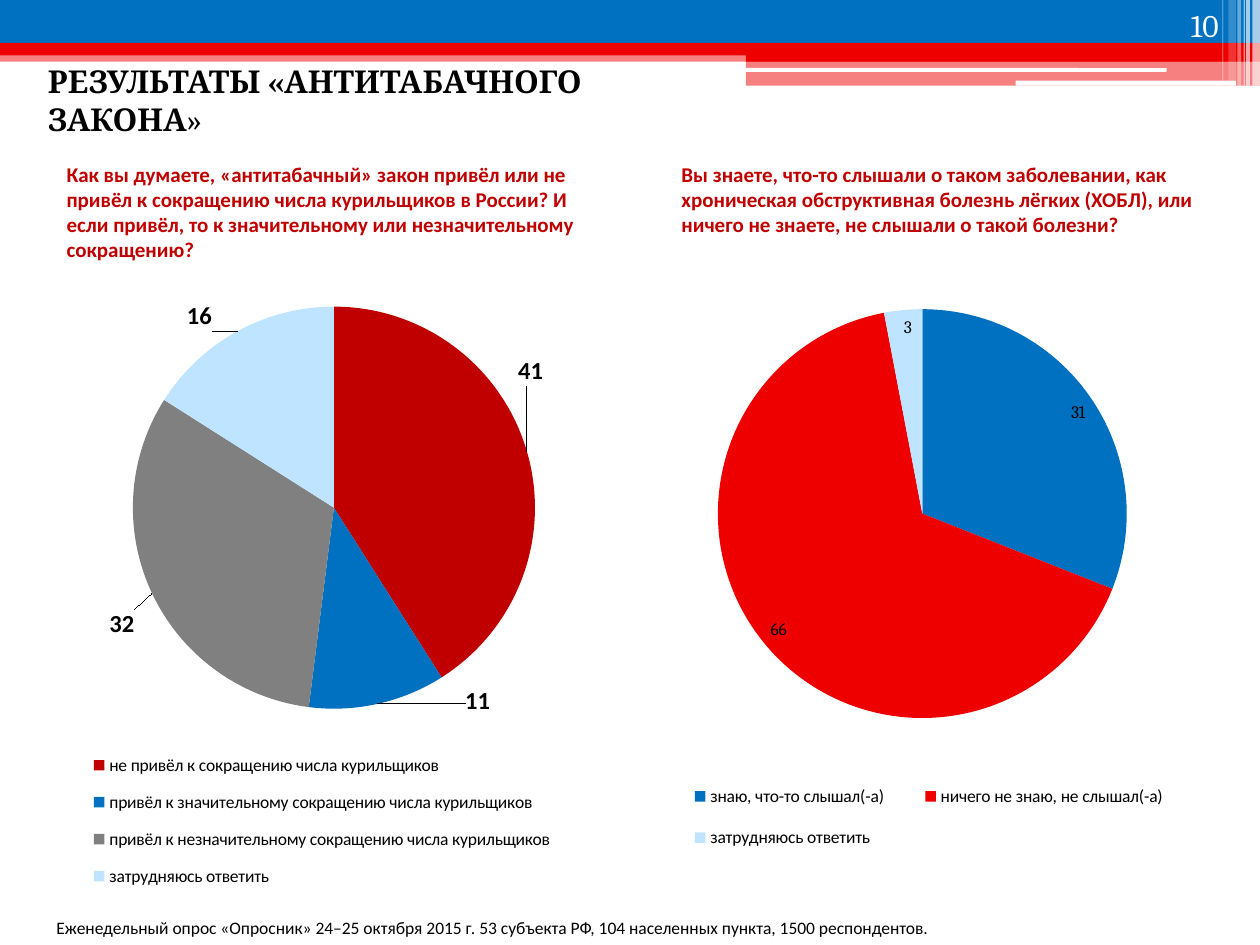
from lxml.etree import SubElement
from pptx import Presentation
from pptx.chart.data import CategoryChartData
from pptx.dml.color import RGBColor
from pptx.enum.chart import XL_CHART_TYPE, XL_LABEL_POSITION, XL_LEGEND_POSITION
from pptx.enum.shapes import MSO_SHAPE
from pptx.enum.text import MSO_ANCHOR, PP_ALIGN
from pptx.oxml import parse_xml
from pptx.oxml.ns import nsdecls, qn
from pptx.util import Inches, Pt

BLACK = RGBColor(0x00, 0x00, 0x00)
WHITE = RGBColor(0xFF, 0xFF, 0xFF)
BLUE = RGBColor(0x00, 0x70, 0xC0)
RED = RGBColor(0xEE, 0x00, 0x00)
DARK_RED = RGBColor(0xC0, 0x00, 0x00)
GRAY = RGBColor(0x80, 0x80, 0x80)
PALE_BLUE = RGBColor(0xBF, 0xE4, 0xFF)

TITLE = {"name": "Cambria", "size": Pt(18), "bold": True}
NUMBER = {"name": "Cambria", "size": Pt(18), "bold": False}
QUESTION = {"name": "Calibri", "size": Pt(12), "bold": True}
NOTE = {"name": "Calibri", "size": Pt(10), "bold": False}
CHART = {"name": "Cambria", "size": Pt(10)}
LABEL = {"name": "Calibri", "size": Pt(14), "bold": True}

LAW = {
    "values": [
        ("не привёл к сокращению числа курильщиков", 41, DARK_RED),
        ("привёл к значительному сокращению числа курильщиков", 11, BLUE),
        ("привёл к незначительному сокращению числа курильщиков", 32, GRAY),
        ("затрудняюсь ответить", 16, PALE_BLUE),
    ],
    "plot": (0.147, 0.05, 0.751, 0.634),
    "legend": (0.03, 0.73, 0.94, 0.26),
    "legend_position": XL_LEGEND_POSITION.BOTTOM,
    "label_position": XL_LABEL_POSITION.OUTSIDE_END,
    "label_font": LABEL,
    "offsets": [(-0.03, -0.1), (0.16, -0.04), (-0.02, 0.02), (-0.04, 0.01)],
}
DISEASE = {
    "values": [
        ("знаю, что-то слышал(-а)", 31, BLUE),
        ("ничего не знаю, не слышал(-а)", 66, RED),
        ("затрудняюсь ответить", 3, PALE_BLUE),
    ],
    "plot": (0.15, 0.089, 0.698, 0.665),
    "legend": (0.05, 0.83, 0.92, 0.18),
    "legend_position": XL_LEGEND_POSITION.RIGHT,
    "label_position": XL_LABEL_POSITION.INSIDE_END,
    "label_font": {},
    "offsets": [],
}


def inches(box):
    """Convert a box to lengths."""
    return [Inches(v) for v in box]


def set_font(font, fmt, color):
    """Apply format values and a colour to a font."""
    for key, value in fmt.items():
        setattr(font, key, value)
    font.color.rgb = color


def add_bar(slide, box, color, alpha=100, shape=MSO_SHAPE.RECTANGLE):
    """Add a borderless bar, with alpha in percent."""
    sp = slide.shapes.add_shape(shape, *inches(box))
    sp.shadow.inherit = False
    sp.fill.solid()
    sp.fill.fore_color.rgb = color
    sp.line.fill.background()
    if alpha < 100:
        clr = sp.fill._xPr.find(".//" + qn("a:srgbClr"))
        SubElement(clr, qn("a:alpha")).set("val", str(alpha * 1000))


def add_header(slide, box):
    """Draw the striped band with its accents and the fading edge."""
    left, top, width, _ = box
    for y, height, color, alpha in [
        (0.4, 0.09, RED, 50), (0, 0.34, BLUE, 100), (0.34, 0.1, RED, 100),
    ]:
        add_bar(slide, (left, top + y, width, height), color, alpha)
    for y, height, alpha in [(0.39, 0.1, 100), (0.48, 0.2, 50)]:
        add_bar(slide, (left + 5.92, top + y, width - 5.92, height), RED, alpha)
    for x, y, w, h in [(5.91, 0.54, 3.35, 0.03), (8.06, 0.64, 1.75, 0.04)]:
        add_bar(slide, (left + x, top + y, w, h), WHITE,
                shape=MSO_SHAPE.ROUNDED_RECTANGLE)
    for x, w, h, alpha in [
        (9.94, 0.06, 0.68, 65), (9.89, 0.03, 0.68, 65), (9.87, 0.01, 0.68, 60),
        (9.82, 0.03, 0.68, 40), (9.75, 0.06, 0.64, 20), (9.7, 0.01, 0.64, 30),
    ]:
        add_bar(slide, (left + x, top, w, h), WHITE, alpha)


def add_title(slide, box, text, closing):
    """Place the title, whose closing mark is not bold."""
    sp = slide.shapes.title
    sp.left, sp.top, sp.width, sp.height = inches(box)
    tf = sp.text_frame
    tf.vertical_anchor = MSO_ANCHOR.TOP
    p = tf.paragraphs[0]
    p.alignment = PP_ALIGN.LEFT
    for part, bold in [(text, True), (closing, False)]:
        r = p.add_run()
        r.text = part
        set_font(r.font, {**TITLE, "bold": bold}, BLACK)


def add_text(slide, box, text, fmt, color, align=PP_ALIGN.LEFT,
             anchor=MSO_ANCHOR.TOP):
    """Add a wrapped text box with one run."""
    tf = slide.shapes.add_textbox(*inches(box)).text_frame
    tf.word_wrap = True
    tf.vertical_anchor = anchor
    p = tf.paragraphs[0]
    p.alignment = align
    r = p.add_run()
    r.text = text
    set_font(r.font, fmt, color)


def set_layout(parent, index, values, keys, modes):
    """Give a chart part a manual layout."""
    for old in parent.findall(qn("c:layout")):
        parent.remove(old)
    layout = parse_xml(f"<c:layout {nsdecls('c')}><c:manualLayout/></c:layout>")
    for key, value in [*modes, *zip(keys, values)]:
        SubElement(layout[0], qn(f"c:{key}")).set("val", str(value))
    parent.insert(index, layout)


def add_pie(slide, box, pie):
    """Add a pie chart with coloured points, value labels and a legend."""
    names, values, colors = zip(*pie["values"])
    data = CategoryChartData(number_format="0")
    data.categories = names
    data.add_series("Series 1", values)
    chart = slide.shapes.add_chart(
        XL_CHART_TYPE.PIE, *inches(box), data).chart
    set_font(chart.font, CHART, BLACK)
    chart.has_title = False
    chart.has_legend = True
    legend = chart.legend
    legend.position = pie["legend_position"]
    legend.include_in_layout = False
    set_font(legend.font, NOTE, BLACK)
    edges = [("xMode", "edge"), ("yMode", "edge")]
    set_layout(legend._element, 1, pie["legend"], "xywh", edges)
    set_layout(chart._chartSpace.chart.plotArea, 0, pie["plot"], "xywh",
               [("layoutTarget", "inner"), *edges])
    chart.plots[0].vary_by_categories = True
    series = chart.plots[0].series[0]
    series.data_labels.show_value = True
    for i, color in enumerate(colors):
        point = series.points[i]
        point.format.fill.solid()
        point.format.fill.fore_color.rgb = color
        label = point.data_label
        label.position = pie["label_position"]
        if pie["label_font"]:
            set_font(label.font, pie["label_font"], BLACK)
    for label, offset in zip(series._element.iter(qn("c:dLbl")), pie["offsets"]):
        set_layout(label, 1, offset, "xy", [])


def main():
    """Build the slide and save it."""
    prs = Presentation()
    prs.slide_width, prs.slide_height = Inches(10), Inches(7.5)
    slide = prs.slides.add_slide(prs.slide_layouts[5])
    add_header(slide, (0, 0, 10, 0.68))
    add_title(slide, (0.28, 0.44, 5.63, 0.71),
              "РЕЗУЛЬТАТЫ «АНТИТАБАЧНОГО ЗАКОНА", "»")
    add_text(slide, (8.94, 0, 0.83, 0.4), "10", NUMBER, WHITE,
             PP_ALIGN.RIGHT, MSO_ANCHOR.BOTTOM)
    add_text(slide, (0.43, 1.23, 4.33, 0.91),
             "Как вы думаете, «антитабачный» закон привёл или не привёл "
             "к сокращению числа курильщиков в России? И если привёл, "
             "то к значительному или незначительному сокращению?",
             QUESTION, DARK_RED)
    add_text(slide, (5.31, 1.23, 4.45, 0.71),
             "Вы знаете, что-то слышали о таком заболевании, как хроническая "
             "обструктивная болезнь лёгких (ХОБЛ), или ничего не знаете, "
             "не слышали о такой болезни?", QUESTION, DARK_RED)
    add_pie(slide, (0.43, 2.18, 4.25, 5.04), LAW)
    add_pie(slide, (5, 2.02, 4.65, 4.88), DISEASE)
    add_text(slide, (0.35, 7.23, 8.43, 0.27),
             "Еженедельный опрос «Опросник» 24–25 октября 2015 г. 53 субъекта "
             "РФ, 104 населенных пункта, 1500 респондентов.", NOTE, BLACK)
    prs.save("out.pptx")


if __name__ == "__main__":
    main()
